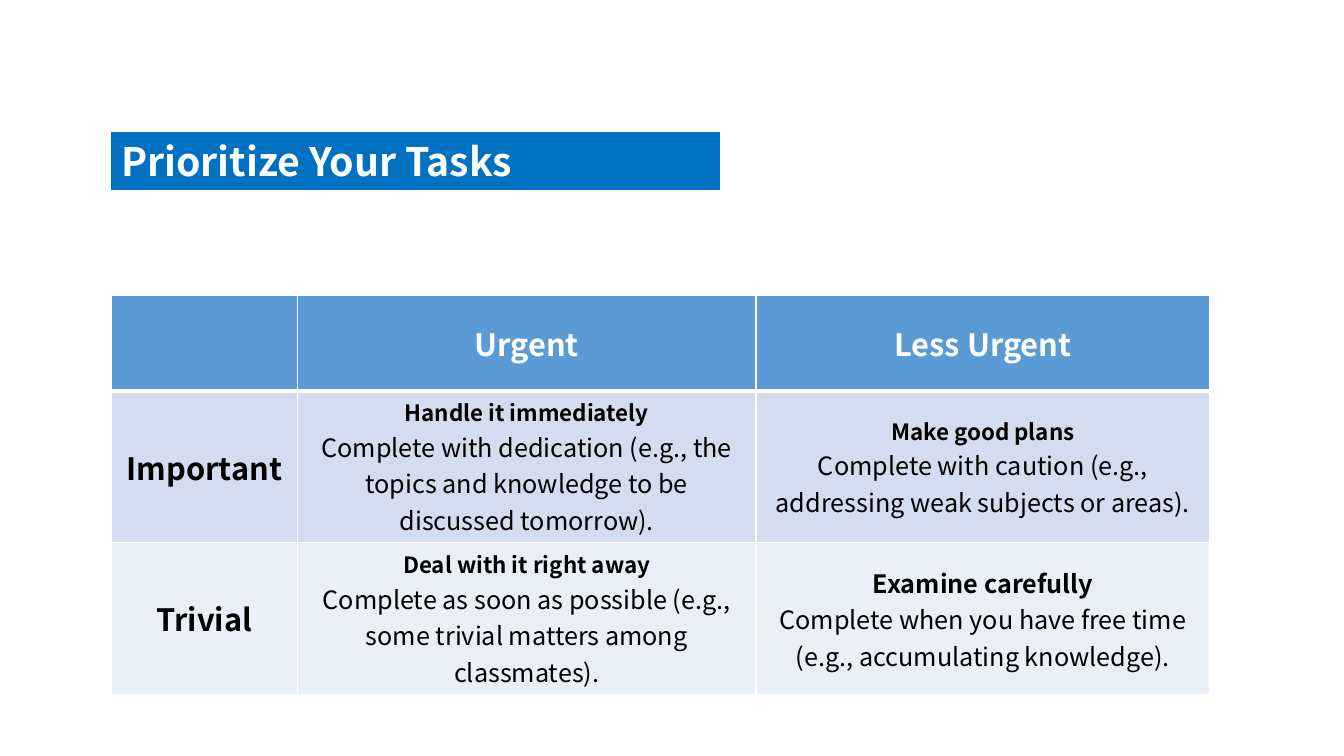
"""Build the task-priority slide: a title bar above a two-by-two matrix."""
from dataclasses import dataclass

from lxml import etree
from pptx import Presentation, util as u
from pptx.dml.color import RGBColor
from pptx.enum import text
from pptx.oxml import ns

FONT = "Noto Sans CJK SC"
WHITE = RGBColor(0xFF, 0xFF, 0xFF)
BLACK = RGBColor(0x00, 0x00, 0x00)
TITLE_BLUE = RGBColor(0x00, 0x70, 0xC0)
HEADER_BLUE = RGBColor(0x5B, 0x9B, 0xD5)
IMPORTANT_BLUE = RGBColor(0xD2, 0xDE, 0xEF)
TRIVIAL_BLUE = RGBColor(0xEA, 0xEF, 0xF7)

LEFT = u.Cm(2.8)
COLUMN_WIDTHS = (u.Cm(4.7), u.Cm(11.55), u.Cm(11.44))
THIN, THICK = u.Pt(1), u.Pt(3)


@dataclass(frozen=True)
class Line:
    """One paragraph of a cell."""
    words: str
    size: int = 22
    bold: bool = True


@dataclass(frozen=True)
class Row:
    """One row of the matrix, with its look."""
    height: u.Length
    fill: RGBColor
    color: RGBColor
    cells: tuple[tuple[Line, ...], ...]
    top: u.Length = THIN
    bottom: u.Length = THIN


def advice(heading: str, detail: str, size: int = 16) -> tuple[Line, ...]:
    """Pair a bold heading with its plain explanation."""
    return Line(heading, size), Line(detail, 18, False)


ROWS = (
    Row(u.Cm(2.41), HEADER_BLUE, WHITE,
        ((), (Line("Urgent"),), (Line("Less Urgent"),)), bottom=THICK),
    Row(u.Cm(3.81), IMPORTANT_BLUE, BLACK, (
        (Line("Important"),),
        advice("Handle it immediately",
               "Complete with dedication (e.g., the topics and knowledge to be discussed tomorrow)."),
        advice("Make good plans",
               "Complete with caution (e.g., addressing weak subjects or areas)."),
    ), top=THICK),
    Row(u.Cm(3.81), TRIVIAL_BLUE, BLACK, (
        (Line("Trivial"),),
        advice("Deal with it right away",
               "Complete as soon as possible (e.g., some trivial matters among classmates)."),
        advice("Examine carefully",
               "Complete when you have free time (e.g., accumulating knowledge).", 18),
    )),
)


def add_span(para, line: Line, color: RGBColor) -> None:
    """Add one formatted run to a paragraph."""
    span = para.add_run()
    span.text = line.words
    span.font.name = FONT
    span.font.size = u.Pt(line.size)
    span.font.bold = line.bold
    span.font.color.rgb = color


def add_borders(cell, row: Row) -> None:
    """Give a cell white borders."""
    properties = cell._tc.get_or_add_tcPr()
    widths = {"lnL": THIN, "lnR": THIN, "lnT": row.top, "lnB": row.bottom}
    for side, width in widths.items():
        border = etree.SubElement(properties, ns.qn(f"a:{side}"), w=str(int(width)))
        fill = etree.SubElement(border, ns.qn("a:solidFill"))
        etree.SubElement(fill, ns.qn("a:srgbClr"), val=str(WHITE))


def fill_cell(cell, row: Row, lines: tuple[Line, ...]) -> None:
    """Format a cell and write its lines."""
    add_borders(cell, row)
    cell.fill.solid()
    cell.fill.fore_color.rgb = row.fill
    cell.vertical_anchor = text.MSO_ANCHOR.MIDDLE
    for index, line in enumerate(lines):
        frame = cell.text_frame
        para = frame.add_paragraph() if index else frame.paragraphs[0]
        para.alignment = text.PP_ALIGN.CENTER
        add_span(para, line, row.color)


def add_matrix(page) -> None:
    """Draw the priority matrix."""
    table = page.shapes.add_table(
        len(ROWS), len(COLUMN_WIDTHS), LEFT, u.Cm(7.44),
        sum(COLUMN_WIDTHS), sum(row.height for row in ROWS)).table
    for column, width in zip(table.columns, COLUMN_WIDTHS):
        column.width = width
    for row, table_row in zip(ROWS, table.rows):
        table_row.height = row.height
        for cell, lines in zip(table_row.cells, row.cells):
            fill_cell(cell, row, lines)


def format_title(box) -> None:
    """Turn the title placeholder into a blue bar."""
    box.left, box.top = LEFT, u.Cm(3.33)
    box.width, box.height = u.Cm(15.34), u.Cm(1.45)
    box.fill.solid()
    box.fill.fore_color.rgb = TITLE_BLUE
    box.line.color.rgb = TITLE_BLUE
    box.line.width = u.Pt(0.75)
    frame = box.text_frame
    frame.word_wrap = True
    frame.auto_size = text.MSO_AUTO_SIZE.NONE
    frame.vertical_anchor = text.MSO_ANCHOR.MIDDLE
    frame.margin_top = frame.margin_bottom = 0
    para = frame.paragraphs[0]
    para.alignment = text.PP_ALIGN.JUSTIFY
    add_span(para, Line("Prioritize Your Tasks", 28), WHITE)


def main() -> None:
    """Build and save the deck."""
    deck = Presentation()
    deck.slide_width, deck.slide_height = u.Cm(33.87), u.Cm(19.05)
    page = deck.slides.add_slide(deck.slide_layouts.get_by_name("Title Only"))
    add_matrix(page)
    format_title(page.shapes.title)
    deck.save("out.pptx")


if __name__ == "__main__":
    main()
